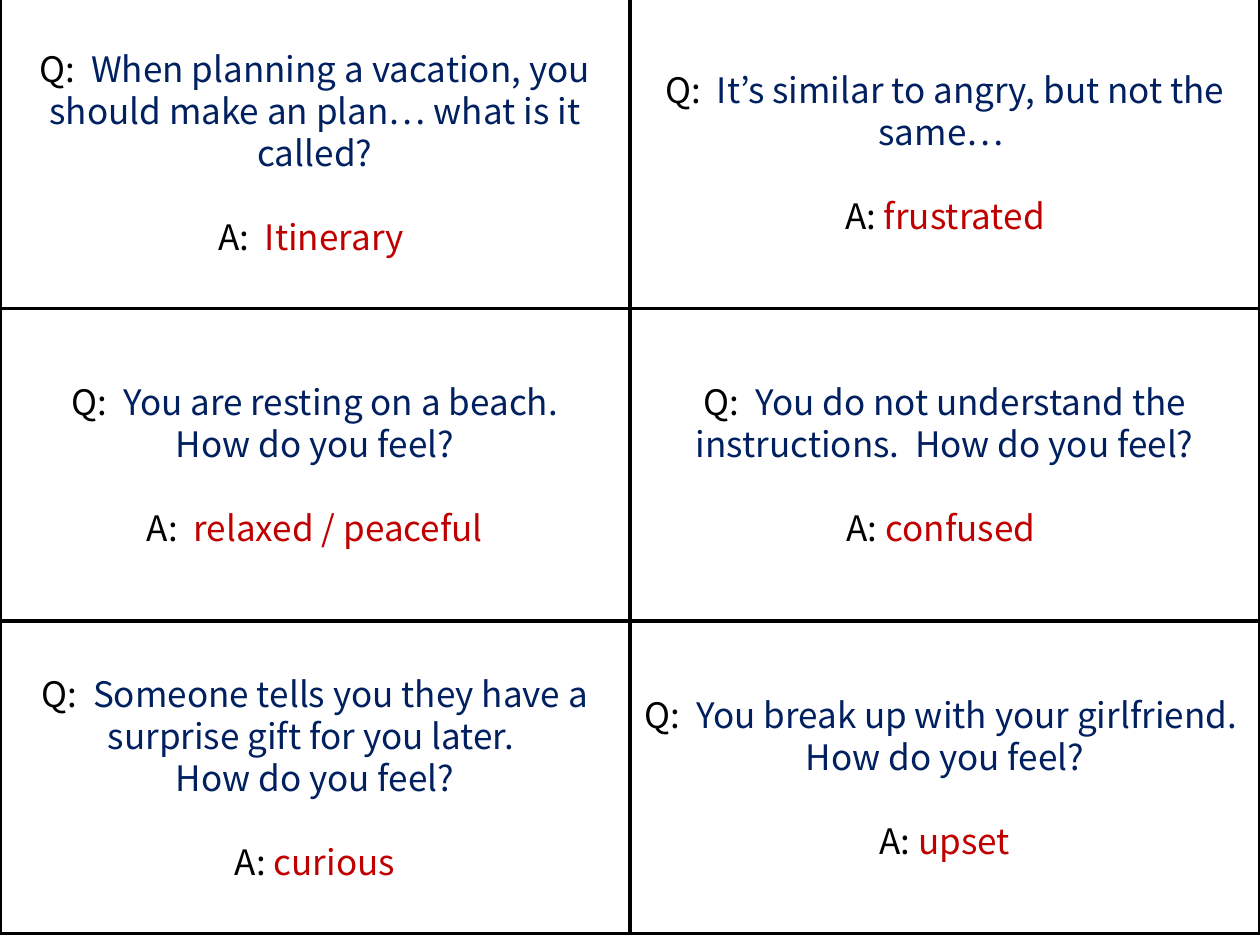
import pptx
import pptx.dml.color
import pptx.enum.shapes
import pptx.enum.text
import pptx.util
from pptx.util import Cm

BLACK = pptx.dml.color.RGBColor(0x00, 0x00, 0x00)
WHITE = pptx.dml.color.RGBColor(0xFF, 0xFF, 0xFF)
NAVY = pptx.dml.color.RGBColor(0x00, 0x20, 0x60)
RED = pptx.dml.color.RGBColor(0xC0, 0x00, 0x00)

FONT = "Noto Sans CJK KR"
LINE_PITCH = pptx.util.Pt(24)
CARD_WIDTH, CARD_HEIGHT = Cm(12.7), Cm(6.3)
GRID_TOP = Cm(-0.08)

# Each card: question lines, answer label, answer
CARD_ROWS = [
    [
        (["When planning a vacation, you should make an plan… what is it called?"],
         "A:  ", "Itinerary "),
        (["It’s similar to angry, but not the same… "], "A: ", "frustrated"),
    ],
    [
        (["You are resting on a beach.", "How do you feel?"],
         "A:  ", "relaxed / peaceful"),
        (["You do not understand the instructions.  How do you feel?"],
         "A: ", "confused "),
    ],
    [
        (["Someone tells you they have a surprise gift for you later. ",
          "How do you feel?"], "A: ", "curious"),
        (["You break up with your girlfriend. ", "How do you feel?"],
         "A: ", "upset"),
    ],
]


def write_line(paragraph, parts):
    """Fill a centred paragraph with (text, colour) parts."""
    paragraph.alignment = pptx.enum.text.PP_ALIGN.CENTER
    paragraph.line_spacing = LINE_PITCH
    for text, color in parts:
        run = paragraph.add_run()
        run.text = text
        run.font.name = FONT
        run.font.size = pptx.util.Pt(20)
        run.font.color.rgb = color


def add_card(slide, left, top, question, answer_label, answer):
    card = slide.shapes.add_shape(
        pptx.enum.shapes.MSO_SHAPE.RECTANGLE, left, top, CARD_WIDTH, CARD_HEIGHT)
    card.shadow.inherit = False
    card.fill.solid()
    card.fill.fore_color.rgb = WHITE
    card.line.color.rgb = BLACK
    card.line.width = pptx.util.Pt(2)

    frame = card.text_frame
    frame.word_wrap = True
    frame.vertical_anchor = pptx.enum.text.MSO_ANCHOR.MIDDLE
    write_line(frame.paragraphs[0], [("Q:  ", BLACK), (question[0], NAVY)])
    for follow_up in question[1:]:
        write_line(frame.add_paragraph(), [(follow_up, NAVY)])
    answer_line = frame.add_paragraph()
    answer_line.space_before = LINE_PITCH
    write_line(answer_line, [(answer_label, BLACK), (answer, RED)])


def main():
    deck = pptx.Presentation()
    deck.slide_width, deck.slide_height = Cm(25.4), Cm(19.05)
    slide = deck.slides.add_slide(deck.slide_layouts[6])
    for row, cards in enumerate(CARD_ROWS):
        for column, card in enumerate(cards):
            add_card(slide, column * CARD_WIDTH, GRID_TOP + row * CARD_HEIGHT, *card)
    deck.save("out.pptx")


if __name__ == "__main__":
    main()
